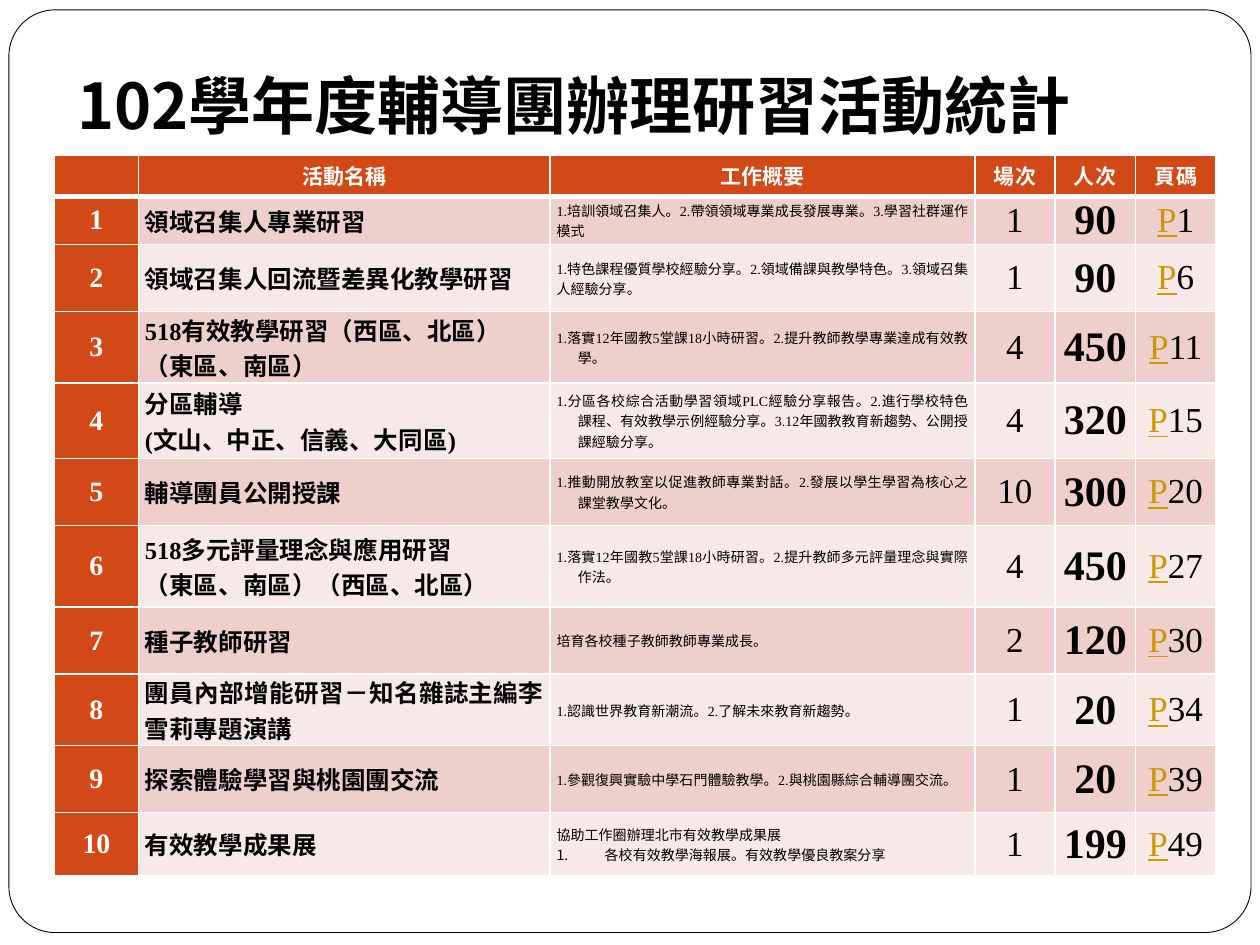
import dataclasses

import lxml.etree
import pptx
import pptx.dml.color
import pptx.enum.shapes
import pptx.enum.text
import pptx.oxml.ns
import pptx.util

Cm = pptx.util.Cm
Pt = pptx.util.Pt
ALIGN = pptx.enum.text.PP_ALIGN
ANCHOR = pptx.enum.text.MSO_ANCHOR
qn = pptx.oxml.ns.qn


def rgb(value):
    return pptx.dml.color.RGBColor.from_string(value)


def sub(parent, tag, **attrs):
    return lxml.etree.SubElement(parent, qn(tag), attrs)


@dataclasses.dataclass(frozen=True)
class Theme:
    serif: str = "Times New Roman"
    sans: str = "Noto Sans CJK SC"
    black: str = "000000"
    white: str = "FFFFFF"
    accent: str = "D34817"
    bands: tuple = ("EFCFCC", "F7E9E8")
    page_mark: str = "CC9900"
    title: int = 36
    header: int = 12
    number: int = 16
    name: int = 14
    summary: int = 8
    count: int = 20
    people: int = 24


TITLE = "102學年度輔導團辦理研習活動統計"
HEADERS = ["", "活動名稱", "工作概要", "場次", "人次", "頁碼"]
COL_WIDTHS = [1.69, 8.3, 8.56, 1.62, 1.62, 1.62]
ROW_HEIGHTS = [0.84, 0.97, 1.35, 1.35, 1.52, 1.35, 1.65, 1.35, 1.35, 1.35, 1.27]
HANG = 0.43
NUMBERED_HANG = 0.97

# name lines, summary lines, summary hanging indent, sessions, people, page
ACTIVITIES = [
    (["領域召集人專業研習"],
     ["1.培訓領域召集人。2.帶領領域專業成長發展專業。3.學習社群運作模式"],
     0, 1, 90, 1),
    (["領域召集人回流暨差異化教學研習"],
     ["1.特色課程優質學校經驗分享。2.領域備課與教學特色。3.領域召集人經驗分享。"],
     0, 1, 90, 6),
    (["518有效教學研習（西區、北區）", "（東區、南區）"],
     ["1.落實12年國教5堂課18小時研習。2.提升教師教學專業達成有效教學。"],
     HANG, 4, 450, 11),
    (["分區輔導", "(文山、中正、信義、大同區)"],
     ["1.分區各校綜合活動學習領域PLC經驗分享報告。2.進行學校特色課程、"
      "有效教學示例經驗分享。3.12年國教教育新趨勢、公開授課經驗分享。"],
     HANG, 4, 320, 15),
    (["輔導團員公開授課"],
     ["1.推動開放教室以促進教師專業對話。2.發展以學生學習為核心之課堂教學文化。"],
     HANG, 10, 300, 20),
    (["518多元評量理念與應用研習", "（東區、南區）（西區、北區）"],
     ["1.落實12年國教5堂課18小時研習。2.提升教師多元評量理念與實際作法。"],
     HANG, 4, 450, 27),
    (["種子教師研習"], ["培育各校種子教師教師專業成長。"], 0, 2, 120, 30),
    (["團員內部增能研習－知名雜誌主編李雪莉專題演講"],
     ["1.認識世界教育新潮流。2.了解未來教育新趨勢。"], 0, 1, 20, 34),
    (["探索體驗學習與桃園團交流"],
     ["1.參觀復興實驗中學石門體驗教學。2.與桃園縣綜合輔導團交流。"],
     HANG, 1, 20, 39),
    (["有效教學成果展"],
     ["協助工作圈辦理北市有效教學成果展", "各校有效教學海報展。有效教學優良教案分享"],
     HANG, 1, 199, 49),
]


class SlideBuilder:
    def __init__(self, prs, theme):
        self.theme = theme
        self.slide = prs.slides.add_slide(prs.slide_layouts[5])

    def run(self, p, text, size, color=None, name=None, spacing=None, **extra):
        name = name or self.theme.serif
        r = p.add_run()
        r.text = text
        formats = {"size": Pt(size), "name": name, "bold": False, **extra}
        for key, value in formats.items():
            setattr(r.font, key, value)
        r.font.color.rgb = rgb(color or self.theme.black)
        rPr = r._r.get_or_add_rPr()
        sub(rPr, "a:ea", typeface=self.theme.sans)
        if spacing:
            rPr.set("spc", str(spacing))

    def frame(self, left, top, width, height):
        sp = self.slide.shapes.add_shape(
            pptx.enum.shapes.MSO_SHAPE.ROUNDED_RECTANGLE,
            Cm(left), Cm(top), Cm(width), Cm(height))
        sp.adjustments[0] = 0.05
        sp.shadow.inherit = False
        sp.fill.solid()
        sp.fill.fore_color.rgb = rgb(self.theme.white)
        sp.line.color.rgb = rgb(self.theme.black)
        sp.line.width = Pt(0.5)
        self.slide.shapes._spTree.insert(2, sp._element)  # behind the title

    def title(self, text, left, top, width, height):
        sp = self.slide.shapes.title
        box = {"left": left, "top": top, "width": width, "height": height}
        for key, value in box.items():
            setattr(sp, key, Cm(value))
        tf = sp.text_frame
        formats = {"vertical_anchor": ANCHOR.BOTTOM, "word_wrap": True,
                   "auto_size": pptx.enum.text.MSO_AUTO_SIZE.NONE,
                   "margin_bottom": Cm(0.25)}
        for key, value in formats.items():
            setattr(tf, key, value)
        p = tf.paragraphs[0]
        p.alignment = ALIGN.LEFT
        self.run(p, text, self.theme.title, name=self.theme.sans, bold=True)

    def table(self, left, top, widths, heights):
        table = self.slide.shapes.add_table(
            len(heights), len(widths), Cm(left), Cm(top),
            Cm(sum(widths)), Cm(sum(heights))).table
        for col, width in zip(table.columns, widths):
            col.width = Cm(width)
        for row, height in zip(table.rows, heights):
            row.height = Cm(height)
        return table

    def cell(self, cell, fill, top=1, bottom=1):
        """Give a cell its margins, white borders (in points) and fill."""
        formats = {"margin_left": Cm(0.13), "margin_right": Cm(0.13),
                   "margin_top": 0, "margin_bottom": 0,
                   "vertical_anchor": ANCHOR.MIDDLE}
        for key, value in formats.items():
            setattr(cell, key, value)
        tcPr = cell._tc.get_or_add_tcPr()
        for side, width in {"L": 1, "R": 1, "T": top, "B": bottom}.items():
            ln = sub(tcPr, f"a:ln{side}", w=str(Pt(width)))
            sub(sub(ln, "a:solidFill"), "a:srgbClr", val=self.theme.white)
        cell.fill.solid()
        cell.fill.fore_color.rgb = rgb(fill)

    def paragraph(self, cell, align=ALIGN.CENTER, hang=0, numbered=False):
        """Return the cell's first paragraph if unused, else a new one."""
        tf = cell.text_frame
        p = tf.paragraphs[0] if not tf.text else tf.add_paragraph()
        p.alignment = align
        if hang:
            pPr = p._p.get_or_add_pPr()
            pPr.set("marL", str(Cm(hang)))
            pPr.set("indent", str(-Cm(hang)))
            if numbered:
                sub(pPr, "a:buFont", typeface=self.theme.sans)
                sub(pPr, "a:buAutoNum", type="arabicPeriod")
        return p

    def header_row(self, cells):
        t = self.theme
        for i, (cell, text) in enumerate(zip(cells, HEADERS)):
            self.cell(cell, t.accent, bottom=3)
            if text:
                self.run(self.paragraph(cell), text, t.header, t.white,
                         bold=True, spacing=60 if i > 2 else None)

    def activity_row(self, cells, number, activity):
        t = self.theme
        names, summaries, hang, sessions, people, page = activity
        band = t.bands[(number - 1) % 2]
        for i, cell in enumerate(cells):
            self.cell(cell, band if i else t.accent, top=3 if number == 1 else 1)
        number_cell, name_cell, summary_cell, session_cell, people_cell, page_cell = cells
        self.run(self.paragraph(number_cell), str(number), t.number, t.white, bold=True)
        for line in names:
            p = self.paragraph(name_cell, ALIGN.JUSTIFY)
            self.run(p, line, t.name, bold=True)
        for i, line in enumerate(summaries):
            p = self.paragraph(summary_cell, ALIGN.JUSTIFY,
                               NUMBERED_HANG if i else hang, numbered=i > 0)
            self.run(p, line, t.summary)
        self.run(self.paragraph(session_cell), str(sessions), t.count)
        self.run(self.paragraph(people_cell), str(people), t.people, bold=True)
        p = self.paragraph(page_cell)
        self.run(p, "P", t.count, t.page_mark, underline=True)
        self.run(p, str(page), t.count)


def main():
    prs = pptx.Presentation()
    prs.slide_width, prs.slide_height = Cm(25.4), Cm(19.05)
    s = SlideBuilder(prs, Theme())
    s.frame(0.18, 0.2, 25.04, 18.6)
    s.title(TITLE, 1.3, 0.76, 22.83, 2.36)
    table = s.table(1.1, 3.12, COL_WIDTHS, ROW_HEIGHTS)
    header, *rows = table.rows
    s.header_row(list(header.cells))
    for number, (row, activity) in enumerate(zip(rows, ACTIVITIES), 1):
        s.activity_row(list(row.cells), number, activity)
    prs.save("out.pptx")


if __name__ == "__main__":
    main()
